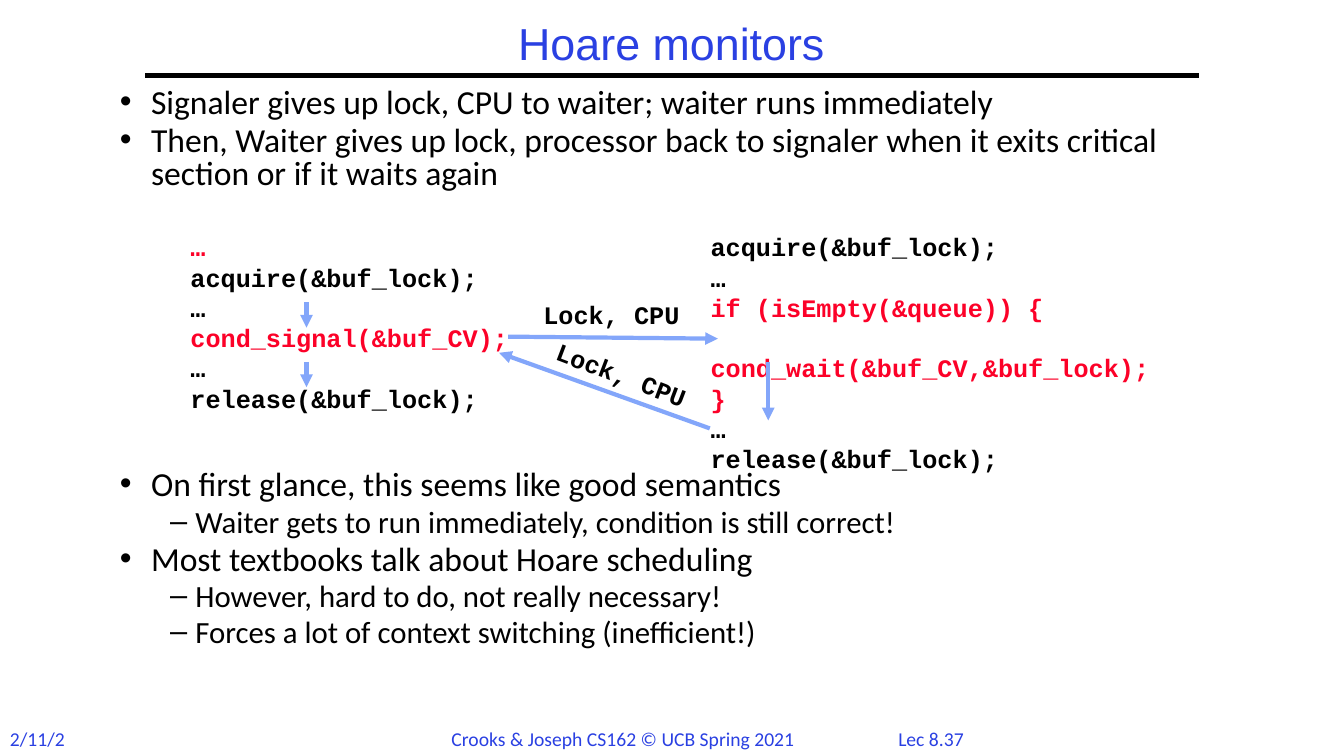
from lxml import etree
from pptx import Presentation
from pptx.dml.color import RGBColor
from pptx.enum.shapes import MSO_CONNECTOR as CONN
from pptx.enum.text import MSO_ANCHOR as ANCHOR, PP_ALIGN as ALIGN
from pptx.oxml.ns import qn
from pptx.util import Emu, Pt

PX = 9144  # 100 px to the inch
BLACK, BLUE, RED, SKY = "000000", "2A40E2", "FC0128", "83A6FA"


def px(n):
    return Emu(n * PX)


def rgb(value):
    return RGBColor.from_string(value)


class Deck:
    title = dict(name="Arial", size=Pt(32))
    footer = dict(name="Calibri", size=Pt(14))
    code = dict(name="Courier New", size=Pt(18), bold=True)
    # bullet sign, text size, left margin and hanging indent per level
    levels = [("•", 24, 31, -31), ("–", 22, 75, -25)]

    def __init__(self, width, height):
        self.prs = Presentation()
        self.prs.slide_width, self.prs.slide_height = px(width), px(height)
        self.s = self.prs.slides.add_slide(self.prs.slide_layouts[6])

    def box(self, x, y, w, h, wrap=True, anchor=ANCHOR.TOP, turn=0):
        sp = self.s.shapes.add_textbox(px(x), px(y), px(w), px(h))
        sp.rotation = turn
        tf = sp.text_frame
        tf.word_wrap, tf.vertical_anchor = wrap, anchor
        return tf

    def para(self, tf, text, font, color, **fmt):
        p = tf.paragraphs[0]
        if p.runs:
            p = tf.add_paragraph()
        for key, value in fmt.items():
            setattr(p, key, value)
        r = p.add_run()
        r.text = text
        for key, value in font.items():
            setattr(r.font, key, value)
        r.font.color.rgb = rgb(color)
        return p

    def text(self, area, text, font, color, align=ALIGN.LEFT, spacing=1.0, **opts):
        tf = self.box(*area, **opts)
        self.para(tf, text, font, color, alignment=align, line_spacing=spacing)

    def bullets(self, area, items):
        tf = self.box(*area)
        for level, before, text in items:
            sign, size, left, indent = self.levels[level]
            p = self.para(tf, text, dict(name="Calibri", size=Pt(size)), BLACK,
                          level=level, line_spacing=0.8, space_before=Pt(before))
            pPr = p._p.get_or_add_pPr()
            pPr.set("marL", str(px(left)))
            pPr.set("indent", str(px(indent)))
            etree.SubElement(pPr, qn("a:buFont")).set("typeface", "Arial")
            etree.SubElement(pPr, qn("a:buChar")).set("char", sign)

    def listing(self, area, lines):
        tf = self.box(*area)
        for color, before, text in lines:
            self.para(tf, text, self.code, color, space_before=Pt(before))

    def line(self, x1, y1, x2, y2, color, arrow=True):
        c = self.s.shapes.add_connector(CONN.STRAIGHT, px(x1), px(y1), px(x2), px(y2))
        c.line.width, c.line.color.rgb = Pt(3), rgb(color)
        if arrow:
            etree.SubElement(c.line._get_or_add_ln(), qn("a:tailEnd")).set("type", "triangle")
        etree.SubElement(c._element.spPr, qn("a:effectLst"))


def main():
    d = Deck(1333, 750)

    # Title and rule
    d.line(144, 75, 1189, 75, BLACK, arrow=False)
    d.text((144, 17, 1044, 58), "Hoare monitors", d.title, BLUE,
           align=ALIGN.CENTER, spacing=0.9, anchor=ANCHOR.MIDDLE)

    # Footer
    d.text((0, 716, 80, 34), "2/11/21", d.footer, BLUE, wrap=False)
    d.text((438, 716, 376, 34), "Crooks & Joseph CS162 © UCB Spring 2021", d.footer, BLUE)
    d.text((875, 716, 97, 34), "Lec 8.37", d.footer, BLUE, align=ALIGN.CENTER)

    # Bullets, with room for the code between the two groups
    gap, room = 4.5, 199.5
    d.bullets((109, 83, 1083, 625), [
        (0, gap, "Signaler gives up lock, CPU to waiter; waiter runs immediately"),
        (0, gap, "Then, Waiter gives up lock, processor back to signaler when it "
                 "exits critical section or if it waits again"),
        (0, room, "On first glance, this seems like good semantics"),
        (1, gap, "Waiter gets to run immediately, condition is still correct!"),
        (0, gap, "Most textbooks talk about Hoare scheduling"),
        (1, gap, "However, hard to do, not really necessary!"),
        (1, gap, "Forces a lot of context switching (inefficient!)"),
    ])

    # Waiter code
    d.listing((695, 225, 483, 222), [
        (BLACK, 0, "acquire(&buf_lock);"),
        (BLACK, 0, "…"),
        (RED, 0, "if (isEmpty(&queue)) {"),
        (RED, 21.5, "cond_wait(&buf_CV,&buf_lock);"),
        (RED, 0, "}"),
        (BLACK, 0, "…"),
        (BLACK, 0, "release(&buf_lock);"),
    ])

    # Signaler code
    d.listing((179, 225, 383, 192), [
        (RED, 0, "…"),
        (BLACK, 0, "acquire(&buf_lock);"),
        (BLACK, 0, "…"),
        (RED, 0, "cond_signal(&buf_CV);"),
        (BLACK, 0, "…"),
        (BLACK, 0, "release(&buf_lock);"),
    ])

    # Hand-over of lock and CPU
    for ends, area, turn in [
        ((504, 334, 712, 336), (529, 292, 167, 40), 0),
        ((704, 425, 495, 350), (539, 352, 157, 40), 20.8),
    ]:
        d.line(*ends, SKY)
        d.text(area, "Lock, CPU", d.code, BLACK, turn=turn)

    # Flow within each thread
    for x, top, bottom in [(304, 300, 325), (304, 359, 384), (762, 359, 417)]:
        d.line(x, top, x, bottom, SKY)

    d.prs.save("out.pptx")


if __name__ == "__main__":
    main()
